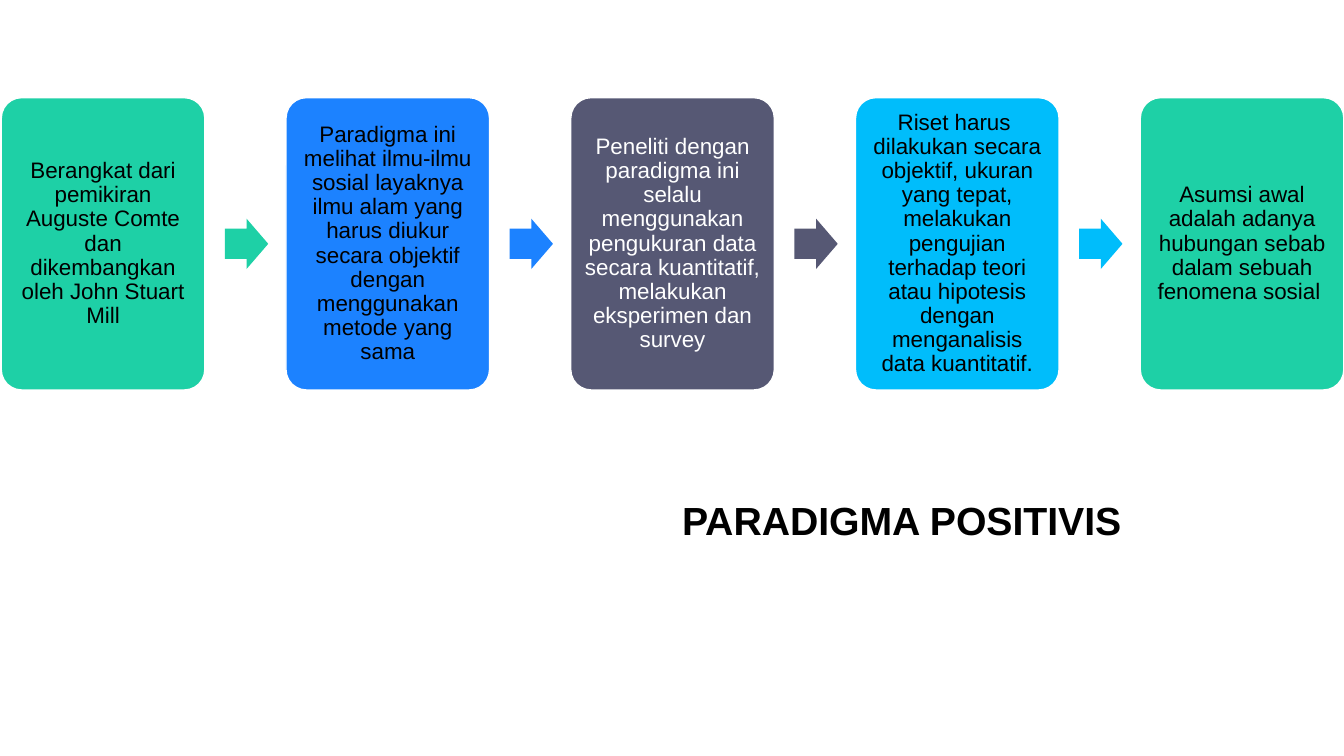
"""Build the slide on the positivist paradigm as a five-step flow."""
from pptx import Presentation
from pptx.dml.color import RGBColor
from pptx.enum.shapes import MSO_SHAPE
from pptx.enum.text import MSO_ANCHOR, MSO_AUTO_SIZE, PP_ALIGN
from pptx.util import Pt

ROUNDED, ARROW = MSO_SHAPE.ROUNDED_RECTANGLE, MSO_SHAPE.RIGHT_ARROW
MIDDLE, NO_FIT = MSO_ANCHOR.MIDDLE, MSO_AUTO_SIZE.NONE
LEFT, CENTER = PP_ALIGN.LEFT, PP_ALIGN.CENTER

BLACK = RGBColor(0x00, 0x00, 0x00)
WHITE = RGBColor(0xFF, 0xFF, 0xFF)
GREEN = RGBColor(0x1E, 0xD0, 0xA6)
BLUE = RGBColor(0x1C, 0x82, 0xFF)
SLATE = RGBColor(0x56, 0x58, 0x74)
SKY = RGBColor(0x00, 0xBD, 0xFB)

TITLE = "PARADIGMA POSITIVIS"
STEPS = [
    ("Berangkat dari pemikiran Auguste Comte dan dikembangkan oleh John Stuart Mill",
     GREEN, BLACK),
    ("Paradigma ini melihat ilmu-ilmu sosial layaknya ilmu alam yang harus diukur "
     "secara objektif dengan menggunakan metode yang sama", BLUE, BLACK),
    ("Peneliti dengan paradigma ini selalu menggunakan pengukuran data secara "
     "kuantitatif, melakukan eksperimen dan survey", SLATE, WHITE),
    ("Riset harus  dilakukan secara objektif, ukuran yang tepat, melakukan pengujian "
     "terhadap teori atau hipotesis dengan menganalisis data kuantitatif.", SKY, BLACK),
    ("Asumsi awal adalah adanya hubungan sebab dalam sebuah fenomena sosial ",
     GREEN, BLACK),
]

FIRST_LEFT, STEP_PITCH = 0.9, 203.4
STEP_TOP, STEP_WIDTH, STEP_HEIGHT = 69.8, 145.4, 208.8
ARROW_OFFSET, ARROW_WIDTH, ARROW_HEIGHT = 159.7, 31, 36
STEP_INSET = 4.8


def add_filled(page, kind, left, top, width, height, color, adjustments):
    shape = page.shapes.add_shape(kind, Pt(left), Pt(top), Pt(width), Pt(height))
    shape.shadow.inherit = False
    shape.fill.solid()
    shape.fill.fore_color.rgb = color
    for index, value in enumerate(adjustments):
        shape.adjustments[index] = value
    return shape


def write(frame, text, size, color, align, bold=False):
    frame.text = text
    frame.word_wrap = True
    frame.auto_size = NO_FIT
    frame.vertical_anchor = MIDDLE
    para = frame.paragraphs[0]
    para.alignment = align
    para.line_spacing = 1.0 if bold else 0.9
    font = para.runs[0].font
    font.name, font.size, font.bold = "Arial", Pt(size), bold
    font.color.rgb = color


def add_step(page, left, text, fill, color):
    box = add_filled(page, ROUNDED, left, STEP_TOP, STEP_WIDTH, STEP_HEIGHT, fill, [0.1])
    box.line.color.rgb = WHITE
    box.line.width = Pt(1)
    frame = box.text_frame
    frame.margin_left = frame.margin_right = Pt(STEP_INSET)
    frame.margin_top = frame.margin_bottom = Pt(STEP_INSET)
    write(frame, text, 16, color, CENTER)


def main():
    deck = Presentation()
    deck.slide_width, deck.slide_height = Pt(960), Pt(540)
    page = deck.slides.add_slide(deck.slide_layouts[5])

    title = page.shapes.title
    title.left, title.top, title.width, title.height = Pt(480), Pt(350.6), Pt(386.6), Pt(41)
    write(title.text_frame, TITLE, 28, BLACK, LEFT, bold=True)

    arrow_top = STEP_TOP + (STEP_HEIGHT - ARROW_HEIGHT) / 2
    for index, (text, fill, color) in enumerate(STEPS):
        left = FIRST_LEFT + index * STEP_PITCH
        add_step(page, left, text, fill, color)
        if index < len(STEPS) - 1:
            arrow = add_filled(page, ARROW, left + ARROW_OFFSET, arrow_top,
                               ARROW_WIDTH, ARROW_HEIGHT, fill, [0.6, 0.5])
            arrow.line.fill.background()

    deck.save("out.pptx")


if __name__ == "__main__":
    main()
